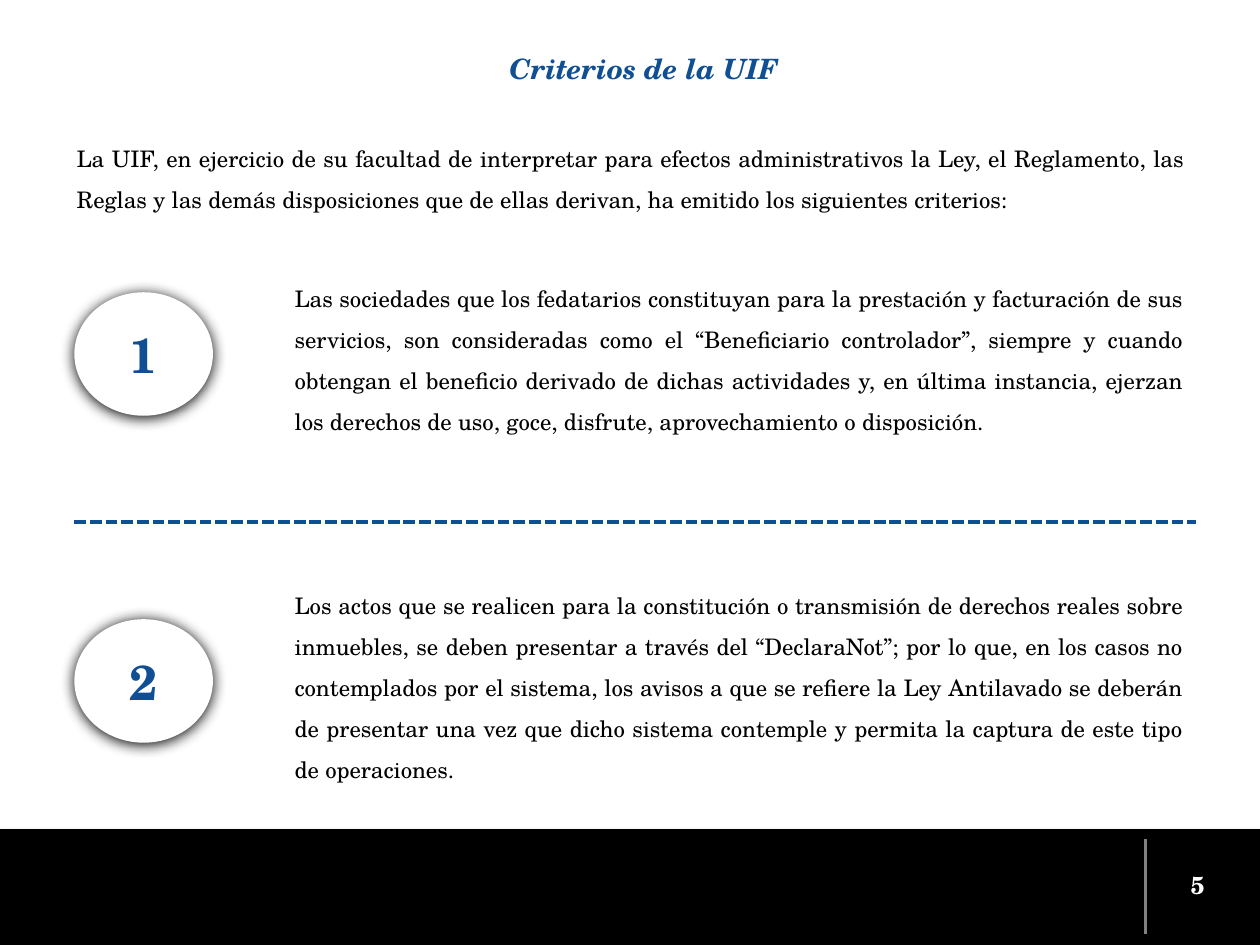
from lxml.etree import SubElement as Sub
from pptx import Presentation
from pptx.dml.color import RGBColor as Color
from pptx.enum.dml import MSO_LINE as Dash
from pptx.enum.shapes import MSO_CONNECTOR as Link, MSO_SHAPE as Kind
from pptx.enum.text import MSO_ANCHOR as Anchor, MSO_AUTO_SIZE as Auto, PP_ALIGN as Align
from pptx.oxml.ns import qn
from pptx.util import Inches, Pt

WIDE, HIGH = Inches(10), Inches(7.5)
BLUE = Color(0x10, 0x4F, 0x94)
BLACK = Color(0, 0, 0)
WHITE = Color(255, 255, 255)
GRAY = Color(128, 128, 128)
FACE = "TeX Gyre Schola"

BODY = {"size": Pt(13), "color": BLACK}
HEAD = {"size": Pt(16), "color": BLUE, "bold": True, "italic": True}
MARK = {"size": Pt(28), "color": BLUE, "bold": True}
PAGE = {"size": Pt(14), "color": WHITE, "bold": True}

TITLE = "Criterios de la UIF"
INTRO = (
    "La UIF, en ejercicio de su facultad de interpretar para efectos administrativos "
    "la Ley, el Reglamento, las Reglas y las demás disposiciones que de ellas derivan, "
    "ha emitido los siguientes criterios:"
)
RULES = [
    "Las sociedades que los fedatarios constituyan para la prestación y facturación de "
    "sus servicios, son consideradas como el “Beneficiario controlador”, siempre y cuando "
    "obtengan el beneficio derivado de dichas actividades y, en última instancia, ejerzan "
    "los derechos de uso, goce, disfrute, aprovechamiento o disposición.",
    "Los actos que se realicen para la constitución o transmisión de derechos reales sobre "
    "inmuebles, se deben presentar a través del “DeclaraNot”; por lo que, en los casos no "
    "contemplados por el sistema, los avisos a que se refiere la Ley Antilavado se deberán "
    "de presentar una vez que dicho sistema contemple y permita la captura de este tipo de "
    "operaciones.",
]
LEFT, RIGHT = 5.9, 94.9
PITCH = 34.6


def share(x, y, w, h):
    return [round(part * size / 100) for part, size in zip((x, y, w, h), (WIDE, HIGH) * 2)]


def write(shape, text, look, align=Align.CENTER, space=1.0, anchor=Anchor.MIDDLE):
    frame = shape.text_frame
    frame.word_wrap = True
    frame.auto_size = Auto.NONE
    frame.vertical_anchor = anchor
    para = frame.paragraphs[0]
    para.alignment = align
    para.line_spacing = space
    run = para.add_run()
    run.text = text
    run.font.name = FACE
    for key, value in look.items():
        if key == "color":
            run.font.color.rgb = value
        else:
            setattr(run.font, key, value)


def shade(props, blur, dist, alpha):
    list_ = props.find(qn("a:effectLst"))
    cast = Sub(list_, qn("a:outerShdw"), blurRad=str(Pt(blur)), dist=str(Pt(dist)),
               dir="5400000", algn="ctr", rotWithShape="0")
    tint = Sub(cast, qn("a:srgbClr"), val="000000")
    Sub(tint, qn("a:alpha"), val=str(alpha * 1000))


def title(slide):
    head = slide.shapes.title
    spot = dict(zip(("left", "top", "width", "height"), share(LEFT, 5.07, 90.4, 4.8)))
    for key, value in spot.items():
        setattr(head, key, value)
    write(head, TITLE, HEAD, space=0.9)


def label(slide, area, text, look, **form):
    write(slide.shapes.add_textbox(*share(*area)), text, look, **form)


def block(slide, kind, area, fill):
    shape = slide.shapes.add_shape(kind, *share(*area))
    shape.shadow.inherit = False
    shape.fill.solid()
    shape.fill.fore_color.rgb = fill
    shape.line.fill.background()
    return shape


def rule(slide, ends, color, width, dash=None):
    line = slide.shapes.add_connector(Link.STRAIGHT, *share(*ends))
    line.line.color.rgb = color
    line.line.width = Pt(width)
    if dash:
        line.line.dash_style = dash
    props = line._element.spPr
    Sub(props, qn("a:effectLst"))
    return props


def band(slide):
    bar = block(slide, Kind.RECTANGLE, (0, 87.73, 100, 12.27), BLACK)
    shade(bar._element.spPr, 3.1, 1.8, 35)
    shade(rule(slide, (90.9, 88.8, 90.9, 98.8), GRAY, 2), 3.1, 1.6, 38)
    label(slide, (91.1, 90.93, 7.9, 5.33), "5", PAGE)


def point(slide, row, text):
    drop = row * PITCH
    panel = block(slide, Kind.RECTANGLE, (22.4, 25.87 + drop, 72.4, 23.07), WHITE)
    write(panel, text, BODY, Align.JUSTIFY, 1.5)
    disc = block(slide, Kind.OVAL, (LEFT, 30.93 + drop, 11, 13.07), WHITE)
    shade(disc._element.spPr, 8.5, 1, 100)
    write(disc, str(row + 1), MARK)


def main():
    deck = Presentation()
    deck.slide_width, deck.slide_height = WIDE, HIGH
    slide = deck.slides.add_slide(deck.slide_layouts[5])
    band(slide)
    title(slide)
    label(slide, (5.1, 13.2, 89.8, 9.6), INTRO, BODY,
          align=Align.JUSTIFY, space=1.5, anchor=Anchor.TOP)
    for row, text in enumerate(RULES):
        point(slide, row, text)
    rule(slide, (LEFT, 55.2, RIGHT, 55.2), BLUE, 2.25, Dash.SQUARE_DOT)
    deck.save("out.pptx")


if __name__ == "__main__":
    main()
